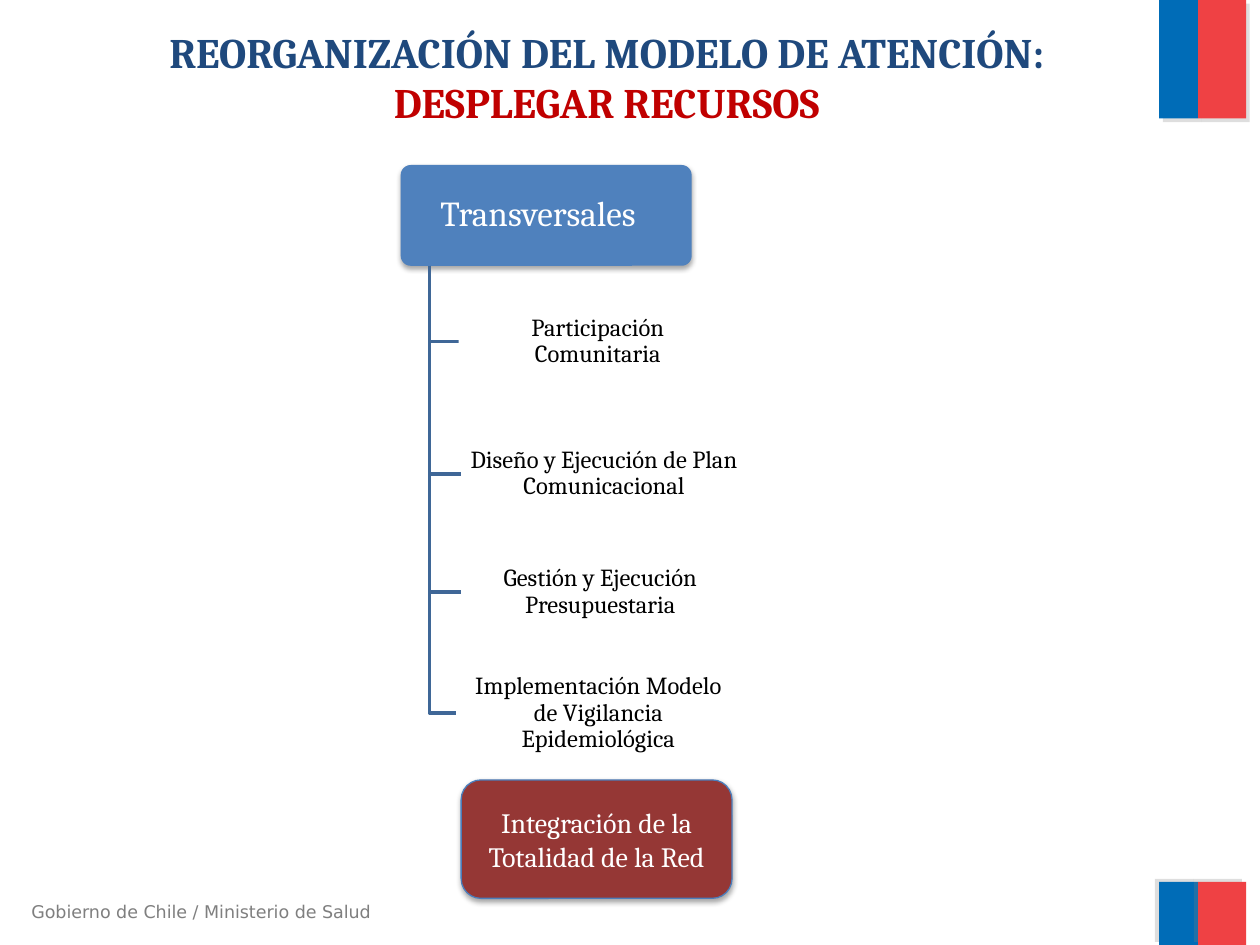
from lxml.etree import SubElement as Sub
from pptx import Presentation
from pptx.dml.color import RGBColor as RGB
from pptx.enum.shapes import MSO_SHAPE as Geo
from pptx.enum.text import MSO_ANCHOR as Anchor, PP_ALIGN as Align
from pptx.oxml.ns import qn
from pptx.util import Inches, Pt

theme = {
    "blue": "006CB7", "red": "EF4144", "navy": "1F497D", "ruby": "C00000",
    "head": "4F81BD", "stem": "3F6797", "wine": "953735", "edge": "4B7EBC",
    "white": "FFFFFF", "black": "000000", "gray": "7F7F7F",
    "serif": "Cambria", "sans": "DejaVu Sans",
    "title": 24, "top": 20, "end": 16, "item": 14, "foot": 10,
}
soft = ("000000", 35, 3.1, 1.8, 90)

deck = Presentation()
deck.slide_width, deck.slide_height = Inches(10), Inches(7.5)
col, row = deck.slide_width / 100, deck.slide_height / 75
page = deck.slides.add_slide(deck.slide_layouts[5])


def put(kind, x, y, w, h, fill, shade=None):
    box = page.shapes.add_shape(
        kind, round(x * col), round(y * row), round(w * col), round(h * row))
    box.fill.solid()
    box.fill.fore_color.rgb = RGB.from_string(theme[fill])
    box.line.fill.background()
    box.shadow.inherit = False
    if shade:
        tint, alpha, blur, dist, turn = shade
        list_ = box._element.spPr.find(qn("a:effectLst"))
        cast = Sub(list_, qn("a:outerShdw"), blurRad=str(Pt(blur)),
                   dist=str(Pt(dist)), dir=str(turn * 60000), rotWithShape="0")
        tone = Sub(cast, qn("a:srgbClr"), val=tint)
        Sub(tone, qn("a:alpha"), val=str(alpha * 1000))
    return box


def write(shape, parts, size, face="serif", bold=False, align=Align.CENTER,
          space=None, **frame):
    body = shape.text_frame
    for key, val in {"word_wrap": True, **frame}.items():
        setattr(body, key, val)
    para = body.paragraphs[0]
    para.alignment, para.line_spacing = align, space
    for i, (text, tint) in enumerate(parts):
        if i:
            para.add_line_break()
        run = para.add_run()
        run.text = text
        look = {"name": theme[face], "size": Pt(theme[size]), "bold": bold}
        for key, val in look.items():
            setattr(run.font, key, val)
        run.font.color.rgb = RGB.from_string(theme[tint])


for y, h, turn in ((0, 9.4, 45), (70, 5, 215)):
    for x, w, fill in ((92, 3.1, "blue"), (95.1, 3.8, "red")):
        put(Geo.RECTANGLE, x, y, w, h, fill, ("808080", 25, 0, 3, turn))

foot = page.shapes.add_textbox(
    round(1.5 * col), round(71 * row), round(30.2 * col), round(2.7 * row))
write(foot, [("Gobierno de Chile / Ministerio de Salud", "gray")],
      "foot", "sans", align=Align.LEFT)

title = page.shapes.title
place = {"left": 3.5 * col, "top": 1.6 * row,
         "width": 89.3 * col, "height": 8.9 * row}
for key, val in place.items():
    setattr(title, key, round(val))
write(title, [("REORGANIZACIÓN DEL MODELO DE ATENCIÓN:", "navy"),
              ("DESPLEGAR RECURSOS", "ruby")],
      "title", bold=True, vertical_anchor=Anchor.TOP)

pad = round(0.3 * col)
tight = {"space": 0.9, "vertical_anchor": Anchor.MIDDLE,
         "margin_left": pad, "margin_right": pad,
         "margin_top": pad, "margin_bottom": pad}
high, stem, base = 8, 34.1, 21.1

head = put(Geo.ROUNDED_RECTANGLE, 31.8, 13.1, 23.1, high, "head", soft)
head.adjustments[0] = 0.1
write(head, [("Transversales", "white")], "top",
      **{**tight, "margin_right": round(1.6 * col)})

items = (
    (36.4, 23.1, 22.1, ("Participación", "Comunitaria")),
    (36.6, 33.6, 22.7, ("Diseño y Ejecución de Plan Comunicacional",)),
    (36.6, 43, 22.1, ("Gestión y Ejecución Presupuestaria",)),
    (36.2, 52.6, 22.6, ("Implementación Modelo de Vigilancia Epidemiológica",)),
)
for x, y, w, lines in items:
    mid = y + high / 2
    pen = page.shapes.build_freeform(round(stem * col), round(base * row))
    pen.add_line_segments(
        [(round(a * col), round(mid * row)) for a in (stem, x)], close=False)
    elbow = pen.convert_to_shape()
    elbow.fill.background()
    elbow.shadow.inherit = False
    elbow.line.color.rgb = RGB.from_string(theme["stem"])
    elbow.line.width = Pt(2)
    card = put(Geo.ROUNDED_RECTANGLE, x, y, w, high, "white")
    card.adjustments[0] = 0.1
    write(card, [(line, "black") for line in lines], "item", **tight)

end = put(Geo.ROUNDED_RECTANGLE, 36.6, 61.9, 21.5, 9.4, "wine", soft)
end.line.color.rgb = RGB.from_string(theme["edge"])
end.line.width = Pt(0.75)
write(end, [("Integración de la Totalidad de la Red", "white")], "end",
      vertical_anchor=Anchor.MIDDLE)

deck.save("out.pptx")
